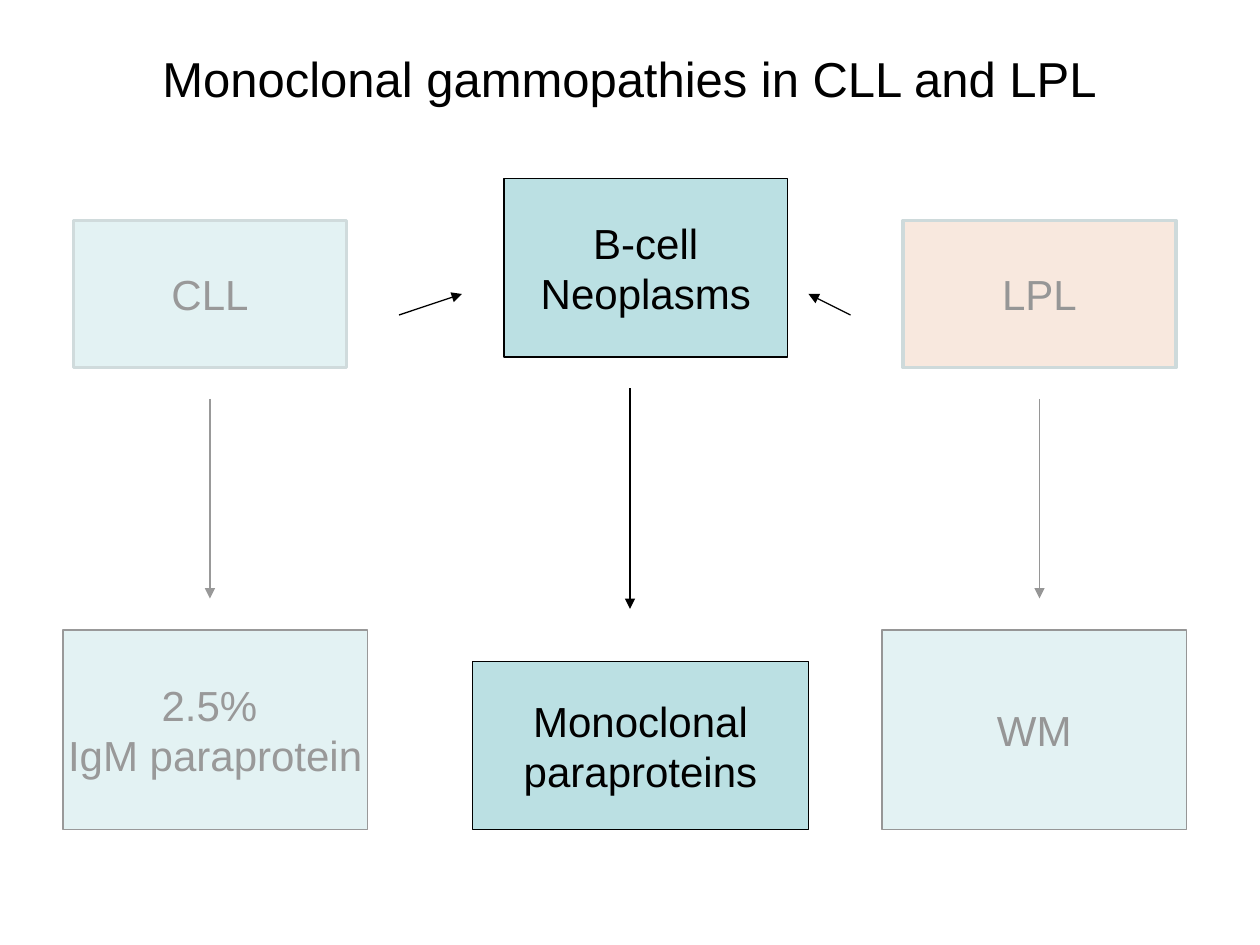
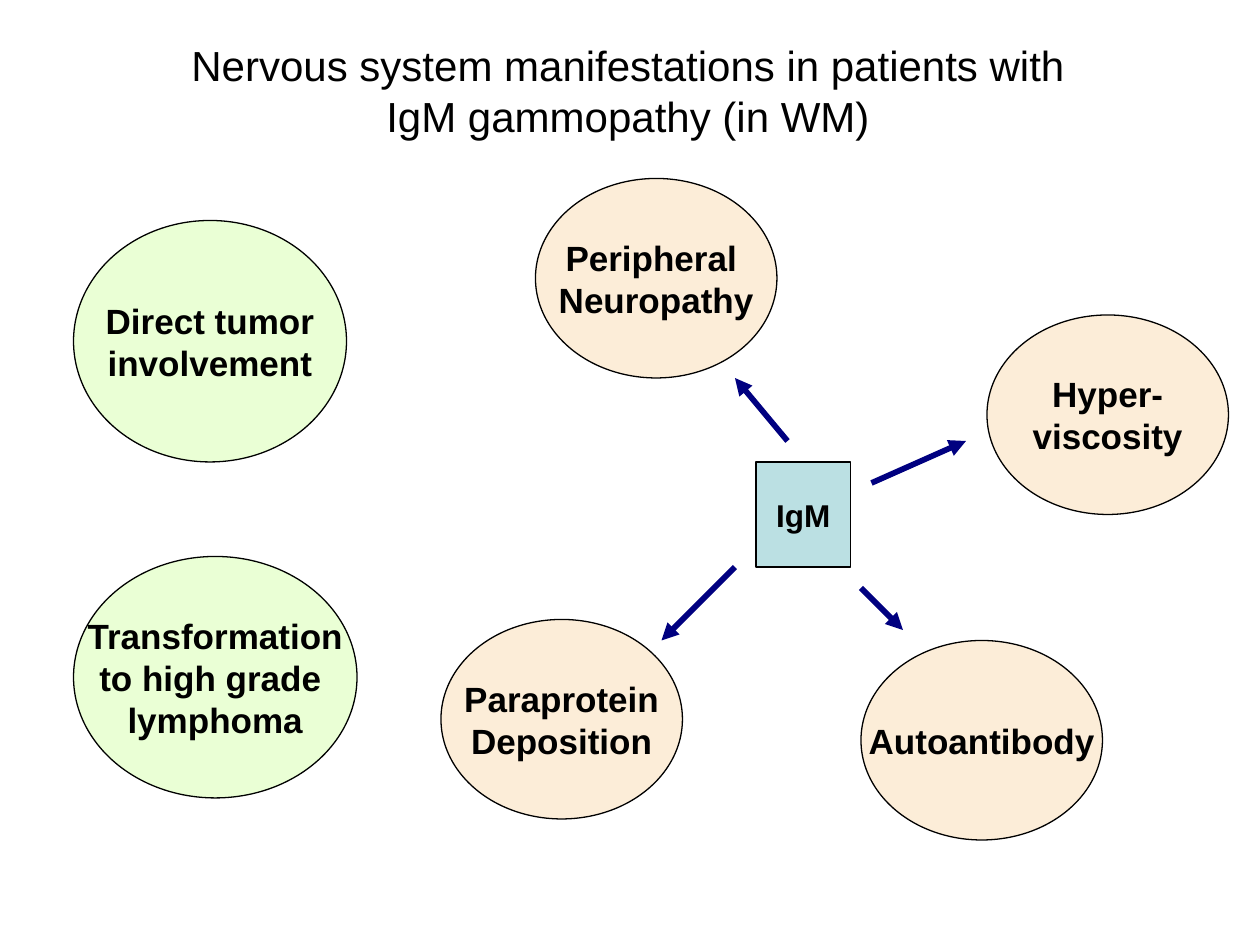
from lxml import etree
from pptx import Presentation
from pptx.dml.color import RGBColor
from pptx.enum.shapes import MSO_CONNECTOR, MSO_SHAPE
from pptx.enum.text import MSO_ANCHOR, PP_ALIGN
from pptx.oxml.ns import qn
from pptx.util import Inches, Pt

BLACK = RGBColor(0x00, 0x00, 0x00)
WHITE = RGBColor(0xFF, 0xFF, 0xFF)
NAVY = RGBColor(0x00, 0x00, 0x80)
AQUA = RGBColor(0xBB, 0xE0, 0xE3)
PEACH = RGBColor(0xEE, 0xC8, 0xB0)
STEEL = RGBColor(0x8A, 0xA6, 0xA8)
CREAM = RGBColor(0xFC, 0xED, 0xD8)
LIME = RGBColor(0xEA, 0xFF, 0xD5)

RECT, OVAL = MSO_SHAPE.RECTANGLE, MSO_SHAPE.OVAL
LINE = MSO_CONNECTOR.STRAIGHT
MIDDLE, TOP = MSO_ANCHOR.MIDDLE, MSO_ANCHOR.TOP
CENTER = PP_ALIGN.CENTER

# Both slides sit on a grid of 120 columns by 90 rows.
COLS, ROWS = 120, 90
deck = Presentation()
deck.slide_width, deck.slide_height = Inches(10), Inches(7.5)
COL, ROW = deck.slide_width / COLS, deck.slide_height / ROWS
BLANK = deck.slide_layouts[6]


def put(slide, kind, cell, text="", fill=None, edge=BLACK, width=0.75, size=24, bold=False):
    """Add a shape, or a text box if kind is None; cell is column, row, columns, rows."""
    place = [round(n * unit) for n, unit in zip(cell, (COL, ROW, COL, ROW))]
    if kind is None:
        shape = slide.shapes.add_textbox(*place)
    else:
        shape = slide.shapes.add_shape(kind, *place)
        shape.shadow.inherit = False
        shape.fill.solid()
        shape.fill.fore_color.rgb = fill
        if edge is None:
            shape.line.fill.background()
        else:
            shape.line.color.rgb = edge
            shape.line.width = Pt(width)
    if text:
        frame = shape.text_frame
        frame.text = text
        frame.word_wrap = False
        frame.vertical_anchor = TOP if kind is None else MIDDLE
        look = {"name": "Arial", "size": Pt(size), "bold": bold}
        for para in frame.paragraphs:
            para.alignment = CENTER
            para.font.color.rgb = BLACK
            for key, value in look.items():
                setattr(para.font, key, value)
    return shape


def point(slide, ends, color=BLACK, width=0.75):
    """Add an arrow; ends holds the start column and row, then the tip's."""
    place = [round(n * unit) for n, unit in zip(ends, (COL, ROW, COL, ROW))]
    arrow = slide.shapes.add_connector(LINE, *place)
    arrow.line.color.rgb = color
    arrow.line.width = Pt(width)
    etree.SubElement(arrow.line._get_or_add_ln(), qn("a:tailEnd"), type="triangle")
    etree.SubElement(arrow._element.spPr, qn("a:effectLst"))


# Slide 1: from neoplasms to paraproteins
slide = deck.slides.add_slide(BLANK)
put(slide, None, (9, 4, 103, 6.8), "Monoclonal gammopathies in CLL and LPL ", size=28)

for left, name, fill in ((7, "CLL", AQUA), (86, "LPL", PEACH)):
    put(slide, RECT, (left, 21, 26, 14), name, fill, STEEL, 2)

for cell, text in (
    ((6, 60, 29, 19), "2.5% \nIgM paraprotein"),
    ((84, 60, 29, 19), "WM"),
    ((48, 17, 27, 17), "B-cell\nNeoplasms"),
    ((45, 63, 32, 16), "Monoclonal\nparaproteins"),
):
    put(slide, RECT, cell, text, AQUA)

for ends in (
    (20, 38, 20, 57),
    (99, 38, 99, 57),
    (60, 37, 60, 58),
    (38, 30, 44, 28),
    (81, 30, 77, 28),
):
    point(slide, ends)

# Pale veils dim the outer columns
for left, top, share in ((0, 13, 60), (83, 15, 59)):
    veil = put(slide, RECT, (left, top, 37, 69), fill=WHITE, edge=None)
    tint = veil.fill._xPr.find(".//" + qn("a:srgbClr"))
    etree.SubElement(tint, qn("a:alpha"), val=str(share * 1000))

# Slide 2: what IgM does to the nervous system
slide = deck.slides.add_slide(BLANK)
put(
    slide, None, (17, 3.2, 85.6, 10.8),
    "Nervous system manifestations in patients with\nIgM gammopathy (in WM)",
)

for left, top, text in (
    (51, 17, "Peripheral \nNeuropathy"),
    (94, 30, "Hyper-\nviscosity"),
    (42, 59, "Paraprotein\nDeposition"),
    (82, 61, "Autoantibody"),
):
    put(slide, OVAL, (left, top, 23, 19), text, CREAM, size=20, bold=True)

for top, wide, text in (
    (21, 26, "Direct tumor\ninvolvement"),
    (53, 27, "Transformation\nto high grade \nlymphoma"),
):
    put(slide, OVAL, (7, top, wide, 23), text, LIME, size=20, bold=True)

put(slide, RECT, (72, 44, 9, 10), "IgM", AQUA, size=18, bold=True)

for ends in ((70, 54, 63, 61), (75, 42, 70, 36), (83, 46, 92, 42), (82, 56, 86, 60)):
    point(slide, ends, NAVY, 3.25)

deck.save("out.pptx")
